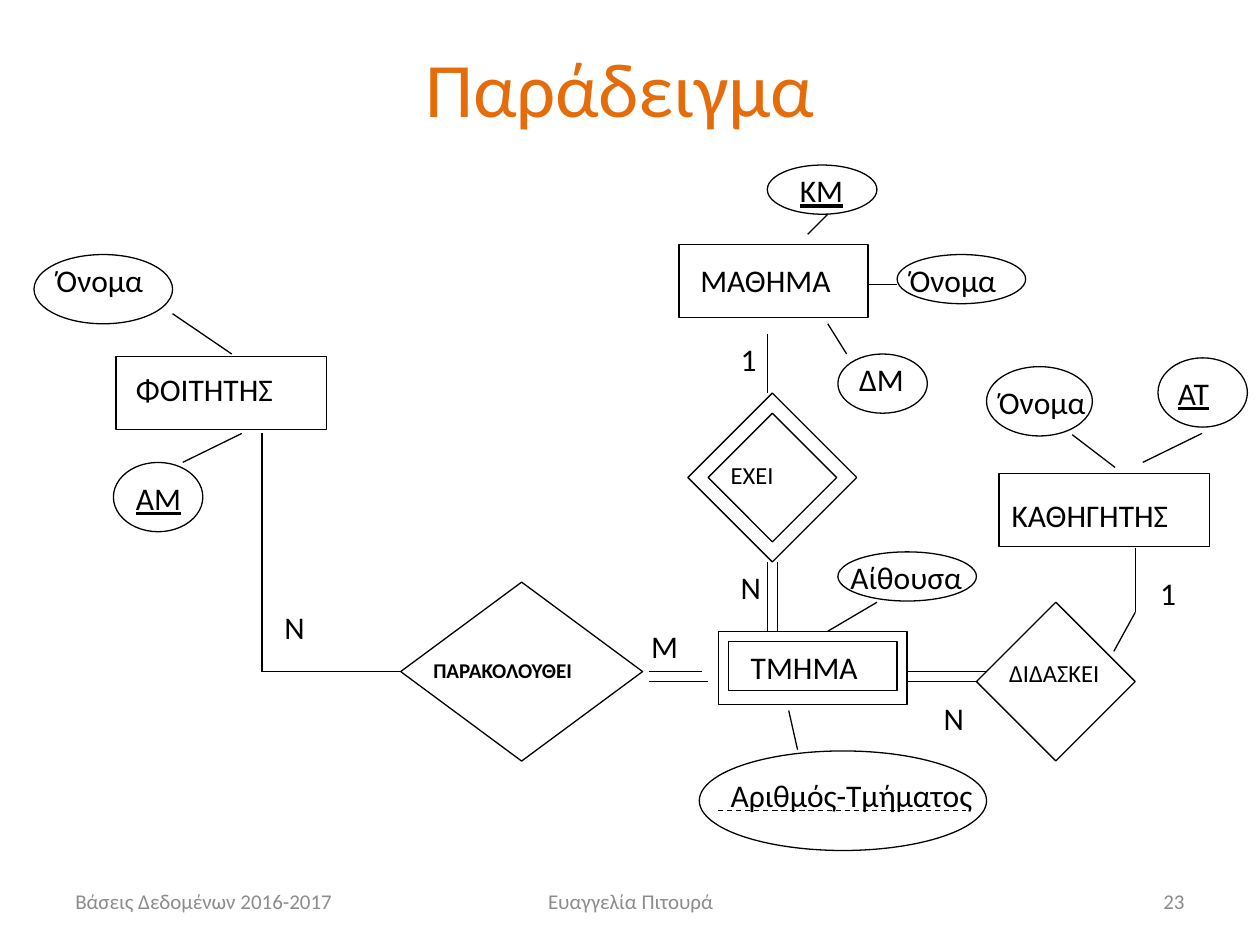
from lxml import etree
from pptx import Presentation
from pptx.dml.color import RGBColor
from pptx.enum import dml, shapes, text
from pptx.oxml.ns import qn
from pptx.util import Inches, Pt

THEME = {
    "font": "Calibri",
    "ink": RGBColor.from_string("000000"),
    "accent": RGBColor.from_string("E46C0A"),
    "muted": RGBColor.from_string("8C8C8C"),
    "title": 44, "body": 18, "small": 14, "note": 12,
    "line": 0.75,
}
ALIGN = text.PP_ALIGN

# Content: boxes are left, top, width, height in inches
TITLE = ("Παράδειγμα", (0.42, 0.06, 9, 1.25))
FOOTERS = [
    ("Βάσεις Δεδομένων 2016-2017", 0.5, 2.33, ALIGN.LEFT),
    ("Ευαγγελία Πιτουρά", 3.42, 3.17, ALIGN.CENTER),
    ("23", 7.17, 2.33, ALIGN.RIGHT),
]

ENTITIES = {
    "student": (0.92, 2.83, 1.67, 0.58),
    "course": (5.39, 1.94, 1.5, 0.58),
    "section": (5.7, 5.01, 1.5, 0.58),
    "section inner": (5.78, 5.09, 1.34, 0.39),
    "professor": (7.93, 3.76, 1.67, 0.58),
}
RELATIONSHIPS = {
    "attends": (3.18, 4.62, 1.92, 1.42),
    "has": (5.46, 3.12, 1.34, 1.34),
    "has inner": (5.62, 3.28, 1.02, 1.02),
    "teaches": (7.75, 4.78, 1.26, 1.26),
}
ATTRIBUTES = {
    "student name": (0.27, 2.02, 1.1, 0.55),
    "student id": (0.9, 3.67, 0.71, 0.55),
    "course id": (6.09, 1.31, 0.87, 0.39),
    "course name": (7.12, 2.02, 1.02, 0.39),
    "course credits": (6.65, 2.81, 0.71, 0.47),
    "section room": (6.65, 4.38, 1.1, 0.39),
    "section number": (5.55, 5.96, 2.28, 0.79),
    "professor name": (7.83, 2.91, 0.84, 0.55),
    "professor id": (9.19, 2.84, 0.71, 0.55),
}

# Labels: wording, left, top, width
LABELS = [
    ("ΦΟΙΤΗΤΗΣ", 0.98, 2.89, 1.81),
    ("ΜΑΘΗΜΑ", 5.46, 2.02, 1.73),
    ("ΤΜΗΜΑ", 5.86, 5.09, 1.81),
    ("ΚΑΘΗΓΗΤΗΣ", 7.93, 3.89, 1.81),
    ("Όνομα", 0.35, 2.02, 1.1),
    ("Όνομα", 7.12, 2.02, 1.02),
    ("Όνομα", 7.83, 2.99, 1.1),
    ("ΔΜ", 6.72, 2.81, 0.87),
    ("Αίθουσα", 6.65, 4.38, 1.42),
    ("Αριθμός-Τμήματος", 5.7, 6.11, 2.36),
]
KEY_LABELS = [
    ("ΑΜ", 0.98, 3.75, 1.73),
    ("ΚΜ", 6.25, 1.31, 1.18),
    ("ΑΤ", 9.25, 2.92, 0.58),
]
RELATIONSHIP_LABELS = [
    ("ΕΧΕΙ", 5.7, 3.6, 1.65),
    ("ΔΙΔΑΣΚΕΙ", 7.91, 5.17, 1.38),
]
BOLD_LABELS = [("ΠΑΡΑΚΟΛΟΥΘΕΙ", 3.34, 5.17, 1.65)]
CARDINALITIES = [
    ("Ν", 2.16, 4.78, 0.63),
    ("Μ", 5.07, 4.93, 0.47),
    ("Ν", 5.78, 4.46, 0.47),
    ("1", 5.78, 2.65, 0.63),
    ("1", 9.11, 4.51, 0.63),
    ("Ν", 7.39, 5.5, 0.47),
]

# Lines: x1, y1, x2, y2
ATTRIBUTE_LINES = [
    (1.37, 2.49, 1.84, 2.81), (1.92, 3.44, 1.45, 3.67),
    (6.57, 1.7, 6.41, 1.86), (6.88, 2.26, 7.12, 2.26),
    (6.57, 2.57, 6.72, 2.81), (6.96, 4.78, 6.57, 5.01),
    (6.26, 5.64, 6.33, 5.95), (8.51, 3.45, 8.85, 3.71),
    (9.54, 3.44, 9.07, 3.67),
]
RELATIONSHIP_LINES = [
    (2.08, 3.44, 2.08, 5.33),
    (6.09, 2.65, 6.09, 3.12),
    (6.09, 4.46, 6.09, 5.01), (6.17, 4.46, 6.17, 5.01),
    (5.15, 5.33, 5.57, 5.33), (5.15, 5.41, 5.62, 5.41),
    (7.2, 5.33, 7.83, 5.33), (7.2, 5.41, 7.75, 5.41),
    (9.01, 4.35, 9.01, 4.86), (9.01, 4.86, 8.84, 5.17),
]
ATTENDS_LINE = (2.08, 5.33, 3.18, 5.33)
PARTIAL_KEY_LINE = (5.7, 6.43, 7.67, 6.43)


def write(shape, wording, size, color, align=ALIGN.LEFT, anchor=text.MSO_ANCHOR.TOP,
          bold=False, underline=False):
    frame = shape.text_frame
    frame.word_wrap = True
    frame.vertical_anchor = anchor
    paragraph = frame.paragraphs[0]
    paragraph.alignment = align
    run = paragraph.add_run()
    run.text = wording
    font = run.font
    font.name, font.size = THEME["font"], Pt(size)
    font.color.rgb = color
    font.bold, font.underline = bold, underline


def add_outline(slide, kind, box):
    shape = slide.shapes.add_shape(kind, *map(Inches, box))
    shape.shadow.inherit = False
    shape.fill.background()
    shape.line.color.rgb = THEME["ink"]
    shape.line.width = Pt(THEME["line"])
    return shape


def add_line(slide, ends):
    connector = slide.shapes.add_connector(shapes.MSO_CONNECTOR.STRAIGHT, *map(Inches, ends))
    connector.line.color.rgb = THEME["ink"]
    connector.line.width = Pt(THEME["line"])
    etree.SubElement(connector._element.spPr, qn("a:effectLst"))
    return connector


def add_labels(slide, labels, size, **style):
    for wording, left, top, width in labels:
        box = slide.shapes.add_textbox(*map(Inches, (left, top, width, size / 60 + 0.1)))
        write(box, wording, size, THEME["ink"], **style)


def main():
    presentation = Presentation()
    presentation.slide_width, presentation.slide_height = Inches(10), Inches(7.5)
    slide = presentation.slides.add_slide(presentation.slide_layouts[5])

    # Title and footers
    wording, box = TITLE
    title = slide.shapes.title
    title.left, title.top, title.width, title.height = map(Inches, box)
    write(title, wording, THEME["title"], THEME["accent"], ALIGN.CENTER, text.MSO_ANCHOR.MIDDLE)
    for wording, left, width, align in FOOTERS:
        footer = slide.shapes.add_textbox(*map(Inches, (left, 6.95, width, 0.4)))
        write(footer, wording, THEME["note"], THEME["muted"], align, text.MSO_ANCHOR.MIDDLE)

    # Entities, relationships and attributes
    outlines = {}
    for kind, group in (
        (shapes.MSO_SHAPE.RECTANGLE, ENTITIES),
        (shapes.MSO_SHAPE.DIAMOND, RELATIONSHIPS),
        (shapes.MSO_SHAPE.OVAL, ATTRIBUTES),
    ):
        for name, box in group.items():
            outlines[name] = add_outline(slide, kind, box)

    # Lines
    for ends in ATTRIBUTE_LINES + RELATIONSHIP_LINES:
        add_line(slide, ends)
    add_line(slide, ATTENDS_LINE).end_connect(outlines["attends"], 1)
    add_line(slide, PARTIAL_KEY_LINE).line.dash_style = dml.MSO_LINE.DASH

    # Labels
    add_labels(slide, LABELS + CARDINALITIES, THEME["body"])
    add_labels(slide, KEY_LABELS, THEME["body"], underline=True)
    add_labels(slide, RELATIONSHIP_LABELS, THEME["small"])
    add_labels(slide, BOLD_LABELS, THEME["note"], bold=True)

    presentation.save("out.pptx")


if __name__ == "__main__":
    main()
